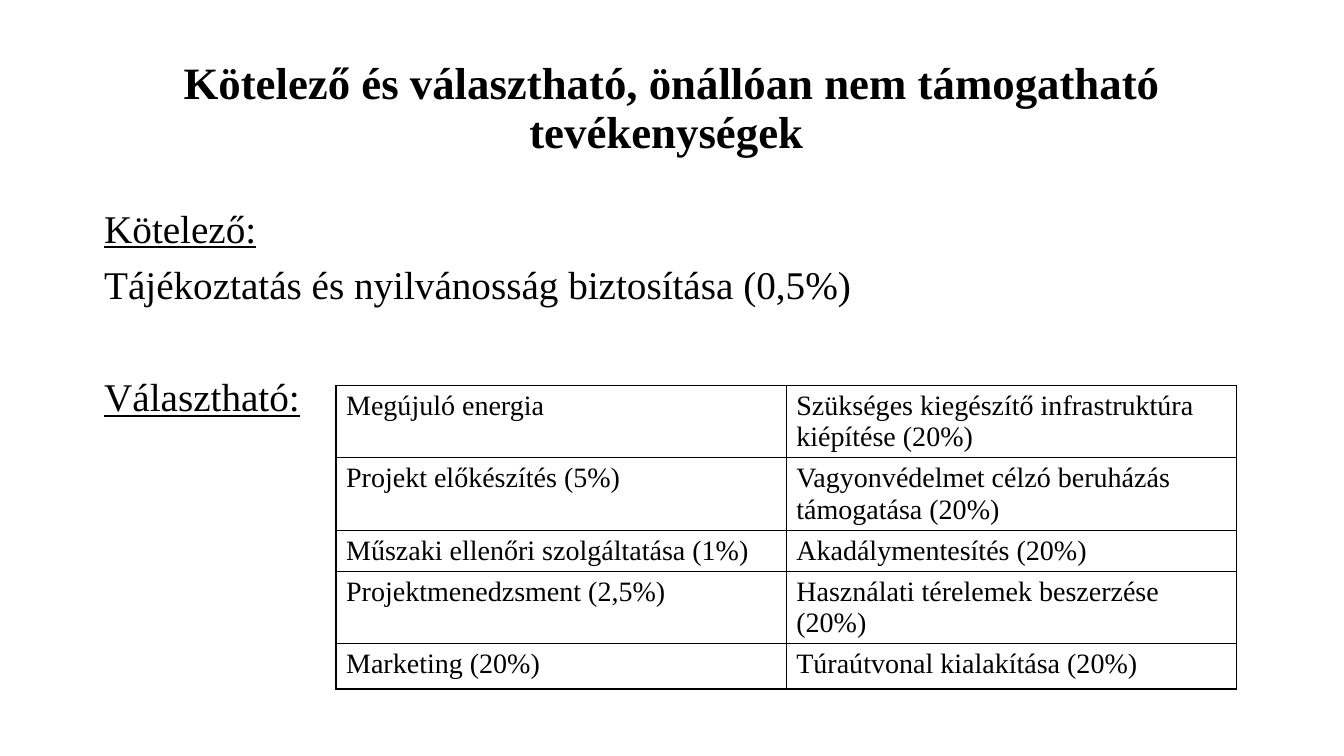
from lxml.etree import SubElement as Sub
from pptx import Presentation
from pptx.dml.color import RGBColor as Rgb
from pptx.enum.text import MSO_ANCHOR as Anchor, MSO_AUTO_SIZE as Fit, PP_ALIGN as Align
from pptx.oxml.ns import qn
from pptx.util import Inches, Pt

COLORS = {"ink": "000000"}
FACE = "Times New Roman"
HEAD = "Kötelező és választható, önállóan nem támogatható tevékenységek "
ITEMS = [
    ("Kötelező:", True, 10),
    ("Tájékoztatás és nyilvánosság biztosítása (0,5%)", False, 10),
    ("Választható:", True, 50),
]
GRANTS = [
    ("Megújuló energia", "Szükséges kiegészítő infrastruktúra kiépítése (20%)"),
    ("Projekt előkészítés (5%)", "Vagyonvédelmet célzó beruházás támogatása (20%)"),
    ("Műszaki ellenőri szolgáltatása (1%)", "Akadálymentesítés (20%)"),
    ("Projektmenedzsment (2,5%)", "Használati térelemek beszerzése (20%)"),
    ("Marketing (20%)", "Túraútvonal kialakítása (20%)"),
]
ROWS = [0.71, 0.71, 0.41, 0.71, 0.45]


def apply(obj, values):
    for name, value in values.items():
        setattr(obj, name, value)


class Deck:
    def __init__(self):
        self.prs = Presentation()
        apply(self.prs, {"slide_width": Inches(13.33), "slide_height": Inches(7.5)})
        self.slide = self.prs.slides.add_slide(self.prs.slide_layouts[1])

    def area(self, left, top, width, height):
        wide, high = self.prs.slide_width, self.prs.slide_height
        parts = (left * wide, top * high, width * wide, height * high)
        return dict(zip(("left", "top", "width", "height"), map(round, parts)))

    def label(self, para, text, size, form={}, **font):
        apply(para, form)
        run = para.add_run()
        run.text = text
        apply(run.font, {"name": FACE, "size": Pt(size), **font})
        run.font.color.rgb = Rgb.from_string(COLORS["ink"])

    def frame(self, shape, area, anchor):
        apply(shape, self.area(*area))
        apply(shape.text_frame, {
            "auto_size": Fit.NONE, "word_wrap": True, "vertical_anchor": anchor})
        return shape.text_frame

    def title(self, text, area):
        frame = self.frame(self.slide.shapes.title, area, Anchor.MIDDLE)
        form = {"alignment": Align.CENTER, "line_spacing": 0.9}
        self.label(frame.paragraphs[0], text, 32, form, bold=True)

    def body(self, items, area):
        frame = self.frame(self.slide.placeholders[1], area, Anchor.TOP)
        for i, (text, under, gap) in enumerate(items):
            para = frame.add_paragraph() if i else frame.paragraphs[0]
            form = {"alignment": Align.JUSTIFY, "line_spacing": 0.9, "space_before": Pt(gap)}
            self.label(para, text, 28, form, underline=under)
            props = para._p.get_or_add_pPr()
            props.set("marL", "0")
            props.set("indent", "0")
            Sub(props, qn("a:buNone"))

    def border(self, cell):
        props = cell._tc.get_or_add_tcPr()
        for side in ("lnL", "lnR", "lnT", "lnB"):
            line = Sub(props, qn(f"a:{side}"), w=str(Pt(1)))
            fill = Sub(line, qn("a:solidFill"))
            Sub(fill, qn("a:srgbClr"), val=COLORS["ink"])

    def table(self, data, highs, area):
        grid = self.slide.shapes.add_table(
            len(data), len(data[0]), **self.area(*area)).table
        apply(grid, {"first_row": False, "horz_banding": False})
        for row, high, texts in zip(grid.rows, highs, data):
            row.height = Inches(high)
            for cell, text in zip(row.cells, texts):
                self.label(cell.text_frame.paragraphs[0], text, 20)
                self.border(cell)
                cell.fill.background()


def main():
    deck = Deck()
    deck.title(HEAD, (0.07, 0.05, 0.86, 0.19))
    deck.body(ITEMS, (0.07, 0.27, 0.86, 0.63))
    deck.table(GRANTS, ROWS, (0.25, 0.51, 0.67, 0.4))
    deck.prs.save("out.pptx")


if __name__ == "__main__":
    main()
